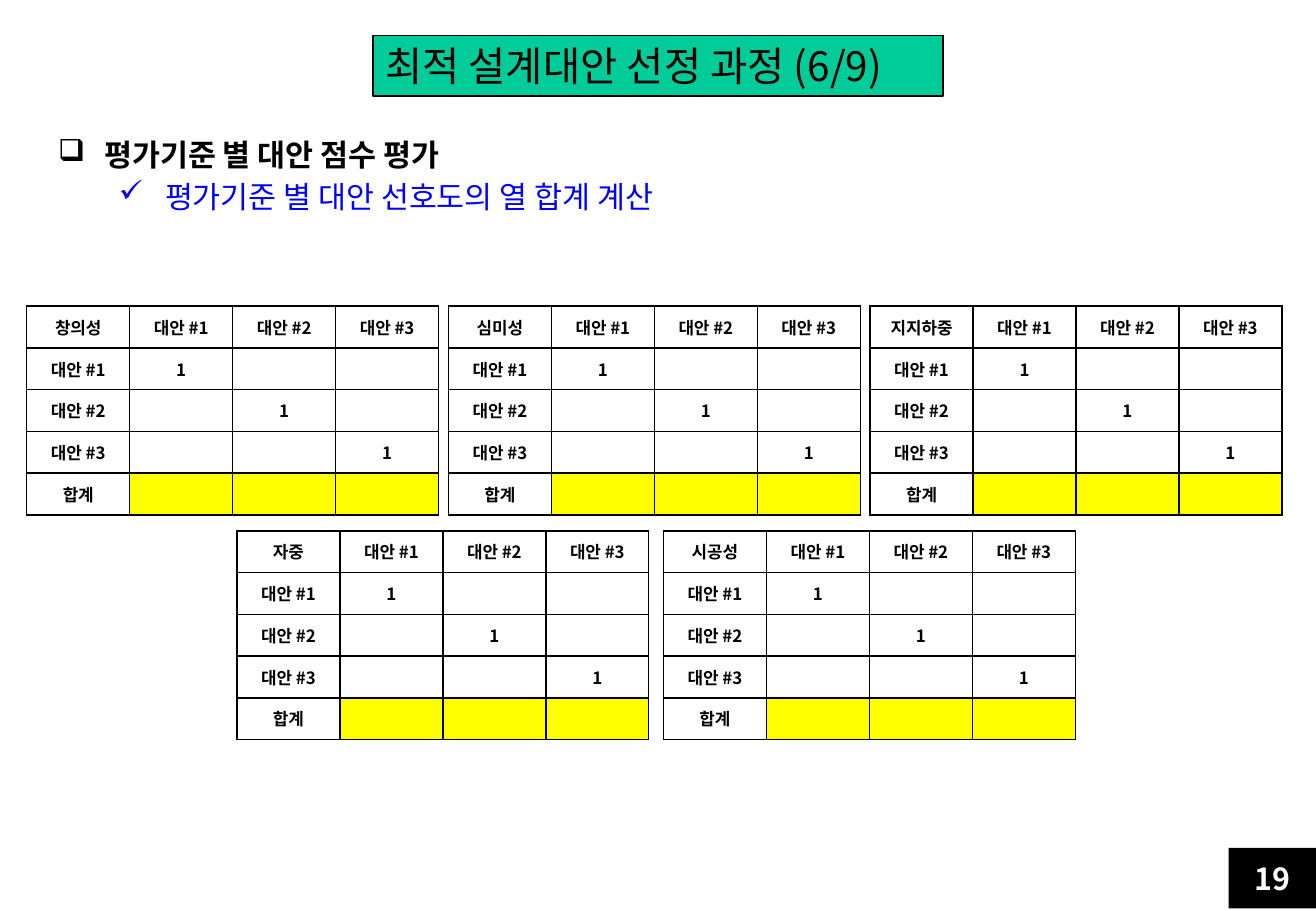
from lxml import etree
from pptx import Presentation
from pptx import util as u
from pptx.dml.color import RGBColor
from pptx.enum import shapes, text
from pptx.oxml.ns import qn

BLACK, WHITE, GREEN, YELLOW, BLUE = "000000", "FFFFFF", "00CC99", "FFFF00", "0000FF"


def colour(value):
    return RGBColor.from_string(value)


def apply(target, values):
    for name, value in values.items():
        setattr(target, name, value)


def add_xml(parent, tag, **attributes):
    return etree.SubElement(parent, qn(tag), attributes)


class SlideBuilder:
    font = "Noto Sans CJK KR"

    def __init__(self, slide):
        self.slide = slide

    def add_words(self, paragraph, words, size, ink=BLACK, bold=False,
                  align=text.PP_ALIGN.LEFT):
        paragraph.alignment = align
        run = paragraph.add_run()
        run.text = words
        apply(run.font, {"size": u.Pt(size), "bold": bold, "name": self.font})
        run.font.color.rgb = colour(ink)
        add_xml(run.font._element, "a:ea", typeface=self.font)

    def box(self, place, words, fill, line=None, frame_format=None, **style):
        box = self.slide.shapes.add_shape(
            shapes.MSO_SHAPE.RECTANGLE, *map(u.Inches, place))
        box.shadow.inherit = False
        box.fill.solid()
        box.fill.fore_color.rgb = colour(fill)
        if line:
            box.line.color.rgb = colour(line)
            box.line.width = u.Pt(0.75)
        else:
            box.line.fill.background()
        apply(box.text_frame, frame_format or {})
        self.add_words(box.text_frame.paragraphs[0], words, **style)

    def outline(self, place, items):
        """Add bulleted lines, each one level below the line before."""
        frame = self.slide.shapes.add_textbox(*map(u.Inches, place)).text_frame
        frame.word_wrap = True
        for level, (bullet, words, style) in enumerate(items):
            paragraph = frame.add_paragraph() if level else frame.paragraphs[0]
            paragraph.level = level
            self.add_words(paragraph, words, **style)
            properties = paragraph._p.get_or_add_pPr()
            properties.set("marL", str(u.Inches(0.38 + 0.5 * level)))
            properties.set("indent", str(u.Inches(-0.38)))
            for side in ("a:spcBef", "a:spcAft"):
                add_xml(add_xml(properties, side), "a:spcPct", val="10000")
            add_xml(properties, "a:buChar", char=bullet)

    def cell(self, cell, words, fill):
        cell.vertical_anchor = text.MSO_ANCHOR.MIDDLE
        paragraph = cell.text_frame.paragraphs[0]
        if words:
            self.add_words(paragraph, words, 10, bold=True, align=text.PP_ALIGN.CENTER)
        else:
            add_xml(paragraph._p, "a:endParaRPr", sz="1000")
        properties = cell._tc.get_or_add_tcPr()
        for side in "LRTB":
            border = add_xml(properties, f"a:ln{side}", w=str(u.Pt(1)))
            add_xml(add_xml(border, "a:solidFill"), "a:srgbClr", val=BLACK)
        cell.fill.solid()
        cell.fill.fore_color.rgb = colour(fill)

    def score_table(self, left, top, criterion, alternatives):
        """Add a matrix with 1 on its diagonal and an empty total row."""
        count = len(alternatives)
        rows = [[criterion, *alternatives]]
        for i, alternative in enumerate(alternatives):
            rows.append([alternative] + ["1" if i == j else "" for j in range(count)])
        rows.append(["합계"] + [""] * count)
        table = self.slide.shapes.add_table(
            len(rows), count + 1, *map(u.Inches, (left, top, 3.39, 1.72))).table
        apply(table, {"first_row": False, "horz_banding": False})
        for r, row in enumerate(rows):
            for c, words in enumerate(row):
                is_total = r == len(rows) - 1 and c > 0
                self.cell(table.cell(r, c), words, YELLOW if is_total else WHITE)


def main():
    deck = Presentation()
    apply(deck, {"slide_width": u.Inches(10.83), "slide_height": u.Inches(7.5)})
    page = SlideBuilder(deck.slides.add_slide(deck.slide_layouts[6]))

    page.box((10.11, 6.98, 0.72, 0.5), "19", BLACK, size=18, ink=WHITE, bold=True,
             frame_format={"vertical_anchor": text.MSO_ANCHOR.MIDDLE},
             align=text.PP_ALIGN.CENTER)
    page.box((3.07, 0.29, 4.69, 0.5), "최적 설계대안 선정 과정 (6/9)", GREEN, BLACK, size=24,
             frame_format={"vertical_anchor": text.MSO_ANCHOR.TOP, "word_wrap": True})
    page.outline((0.38, 1.07, 10, 5.83), [
        ("❑", "평가기준 별 대안 점수 평가", {"size": 18, "bold": True}),
        ("✓", "평가기준 별 대안 선호도의 열 합계 계산", {"size": 18, "ink": BLUE}),
    ])

    alternatives = [f"대안 #{n}" for n in (1, 2, 3)]
    table_rows = [
        (0.22, 2.52, 3.47, ["창의성", "심미성", "지지하중"]),
        (1.95, 4.37, 3.51, ["자중", "시공성"]),
    ]
    for left, top, pitch, criteria in table_rows:
        for i, criterion in enumerate(criteria):
            page.score_table(left + i * pitch, top, criterion, alternatives)

    deck.save("out.pptx")


if __name__ == "__main__":
    main()
